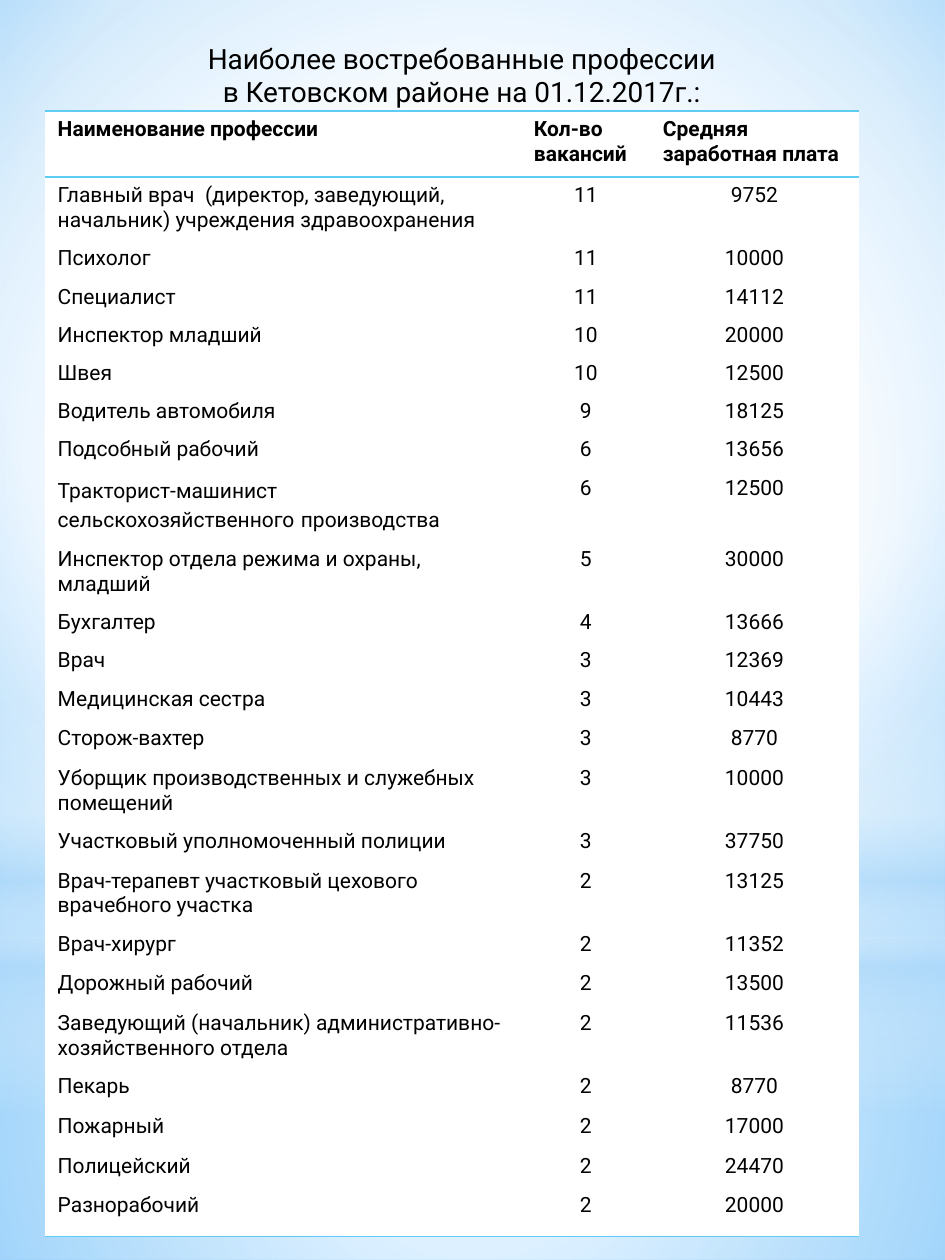
from lxml import etree
from pptx import Presentation
from pptx import util as u
from pptx.dml.color import RGBColor
from pptx.enum import shapes, text
from pptx.oxml import parse_xml
from pptx.oxml.ns import nsdecls, qn

FONT = "Roboto"
BLACK, WHITE, SKY, LINE = "000000", "FFFFFF", "B4DCFA", "5ECCF3"
NO_STYLE = "{2D5ABB26-0587-4C30-8999-92F81FD0307C}"
PAGE_W, PAGE_H = 19.05, 25.4
CENTRE = (50, 50, 50, 50)

HEADINGS = ["Наименование профессии", "Кол-во вакансий", "Средняя заработная плата"]
COLUMN_WIDTHS = [9.6, 2.6, 4.2]
HEADER_H, SINGLE, LOOSE, DOUBLE, TRACTOR_H, LAST_H = 1.33, 0.77, 0.8, 1.26, 1.43, 1.0
TRACTOR_DRIVER = [("Тракторист-машинист", 12), (" ", 14),
                  ("сельскохозяйственного", 12), (" ", 14), ("производства", 12)]
JOBS = [
    ("Главный врач  (директор, заведующий, начальник) учреждения здравоохранения",
     11, 9752, DOUBLE),
    ("Психолог", 11, 10000, SINGLE),
    ("Специалист", 11, 14112, SINGLE),
    ("Инспектор младший", 10, 20000, SINGLE),
    ("Швея", 10, 12500, SINGLE),
    ("Водитель автомобиля", 9, 18125, SINGLE),
    ("Подсобный рабочий", 6, 13656, SINGLE),
    (TRACTOR_DRIVER, 6, 12500, TRACTOR_H),
    ("Инспектор отдела режима и охраны, младший", 5, 30000, DOUBLE),
    ("Бухгалтер", 4, 13666, SINGLE),
    ("Врач", 3, 12369, SINGLE),
    ("Медицинская сестра", 3, 10443, LOOSE),
    ("Сторож-вахтер", 3, 8770, LOOSE),
    ("Уборщик производственных и служебных помещений", 3, 10000, DOUBLE),
    ("Участковый уполномоченный полиции", 3, 37750, LOOSE),
    ("Врач-терапевт участковый цехового врачебного участка", 2, 13125, DOUBLE),
    ("Врач-хирург", 2, 11352, LOOSE),
    ("Дорожный рабочий", 2, 13500, LOOSE),
    ("Заведующий (начальник) административно-хозяйственного отдела",
     2, 11536, DOUBLE),
    ("Пекарь", 2, 8770, LOOSE),
    ("Пожарный", 2, 17000, LOOSE),
    ("Полицейский", 2, 24470, LOOSE),
    ("Разнорабочий", 2, 20000, LAST_H),
]


def colour(value):
    return RGBColor.from_string(value)


def cm_box(*lengths):
    return [u.Cm(length) for length in lengths]


def paint_gradient(fill, owner, stops, focus=None):
    """Fill owner with (position, colour, opacity) stops: radial at focus, else downwards."""
    fill.solid()
    solid = next(owner.iter(qn("a:solidFill")))
    marks = "".join(
        f'<a:gs pos="{pos * 1000}"><a:srgbClr val="{value}">'
        f'<a:alpha val="{opacity * 1000}"/></a:srgbClr></a:gs>'
        for pos, value, opacity in stops)
    if focus:
        sides = " ".join(f'{side}="{part * 1000}"' for side, part in zip("ltrb", focus))
        course = f'<a:path path="circle"><a:fillToRect {sides}/></a:path>'
    else:
        course = '<a:lin ang="5400000" scaled="0"/>'
    gradient = parse_xml(f'<a:gradFill {nsdecls("a")} rotWithShape="1">'
                         f'<a:gsLst>{marks}</a:gsLst>{course}</a:gradFill>')
    solid.getparent().replace(solid, gradient)


def add_glow(page, box, stops, focus=None, kind=shapes.MSO_SHAPE.RECTANGLE):
    glow = page.shapes.add_shape(kind, *cm_box(*box))
    glow.shadow.inherit = False
    glow.line.fill.background()
    paint_gradient(glow.fill, glow._element.spPr, stops, focus)


def add_backdrop(page, width, height):
    paint_gradient(page.background.fill, page._element,
                   [(0, WHITE, 100), (60, WHITE, 100), (100, "5BB9FF", 100)],
                   (20, 10, 20, 60))
    horizon = 18.9
    add_glow(page, (0, horizon, width, height - horizon),
             [(0, WHITE, 91), (37, WHITE, 76), (100, SKY, 79)], CENTRE)
    add_glow(page, (0, 0, width, horizon),
             [(0, WHITE, 89), (48, WHITE, 62), (100, SKY, 79)], CENTRE)
    add_glow(page, (0, 13.94, width, 8.46),
             [(0, WHITE, 0), (29, WHITE, 30), (45, SKY, 40),
              (55, WHITE, 26), (65, SKY, 60), (100, WHITE, 0)])
    add_glow(page, (0, 5.92, width, horizon),
             [(0, WHITE, 100), (56, WHITE, 0)], CENTRE, shapes.MSO_SHAPE.OVAL)


def add_span(para, words, size, bold=False):
    span = para.add_run()
    span.text = words
    span.font.name = FONT
    span.font.size = u.Pt(size)
    span.font.bold = bold
    span.font.color.rgb = colour(BLACK)


def add_title(page, box, lines):
    frame = page.shapes.add_textbox(*cm_box(*box)).text_frame
    frame.word_wrap = True
    frame.auto_size = text.MSO_AUTO_SIZE.SHAPE_TO_FIT_TEXT
    for index, line in enumerate(lines):
        para = frame.add_paragraph() if index else frame.paragraphs[0]
        para.alignment = text.PP_ALIGN.CENTER
        add_span(para, line, 16)


def rule_cell(cell, edges):
    """Draw thin lines on the edges named: T for top, B for bottom."""
    properties = cell._tc.get_or_add_tcPr()
    for index, edge in enumerate(edges):
        properties.insert(index, parse_xml(
            f'<a:ln{edge} {nsdecls("a")} w="12700"><a:solidFill>'
            f'<a:srgbClr val="{LINE}"/></a:solidFill></a:ln{edge}>'))


def fill_cell(cell, content, centred=False, bold=False, edges=""):
    cell.fill.solid()
    cell.fill.fore_color.rgb = colour(WHITE)
    rule_cell(cell, edges)
    para = cell.text_frame.paragraphs[0]
    para.alignment = text.PP_ALIGN.CENTER if centred else text.PP_ALIGN.LEFT
    pieces = content if isinstance(content, list) else [(str(content), 12)]
    for words, size in pieces:
        add_span(para, words, size, bold)


def add_jobs_table(page, left, top):
    heights = [HEADER_H] + [job[-1] for job in JOBS]
    frame = page.shapes.add_table(len(heights), len(HEADINGS), *cm_box(
        left, top, sum(COLUMN_WIDTHS), sum(heights)))
    table = frame.table
    table.first_row = table.horz_banding = False
    style = next(table._tbl.iter(qn("a:tableStyleId")))
    style.text = NO_STYLE
    for column, width in zip(table.columns, COLUMN_WIDTHS):
        column.width = u.Cm(width)
    for row, height in zip(table.rows, heights):
        row.height = u.Cm(height)
    for column, heading in enumerate(HEADINGS):
        fill_cell(table.cell(0, column), heading, bold=True, edges="TB")
    for row, job in enumerate(JOBS, start=1):
        edges = "B" if row == len(JOBS) else ""
        for column, value in enumerate(job[:-1]):
            fill_cell(table.cell(row, column), value, centred=column > 0, edges=edges)


def main():
    deck = Presentation()
    deck.slide_width, deck.slide_height = cm_box(PAGE_W, PAGE_H)
    page = deck.slides.add_slide(deck.slide_layouts[6])
    add_backdrop(page, PAGE_W, PAGE_H)
    add_title(page, (0.91, 0.71, 16.8, 1.63),
              ["Наиболее востребованные профессии",
               "в Кетовском районе на 01.12.2017г.:"])
    add_jobs_table(page, 0.91, 2.24)
    deck.save("out.pptx")


if __name__ == "__main__":
    main()
